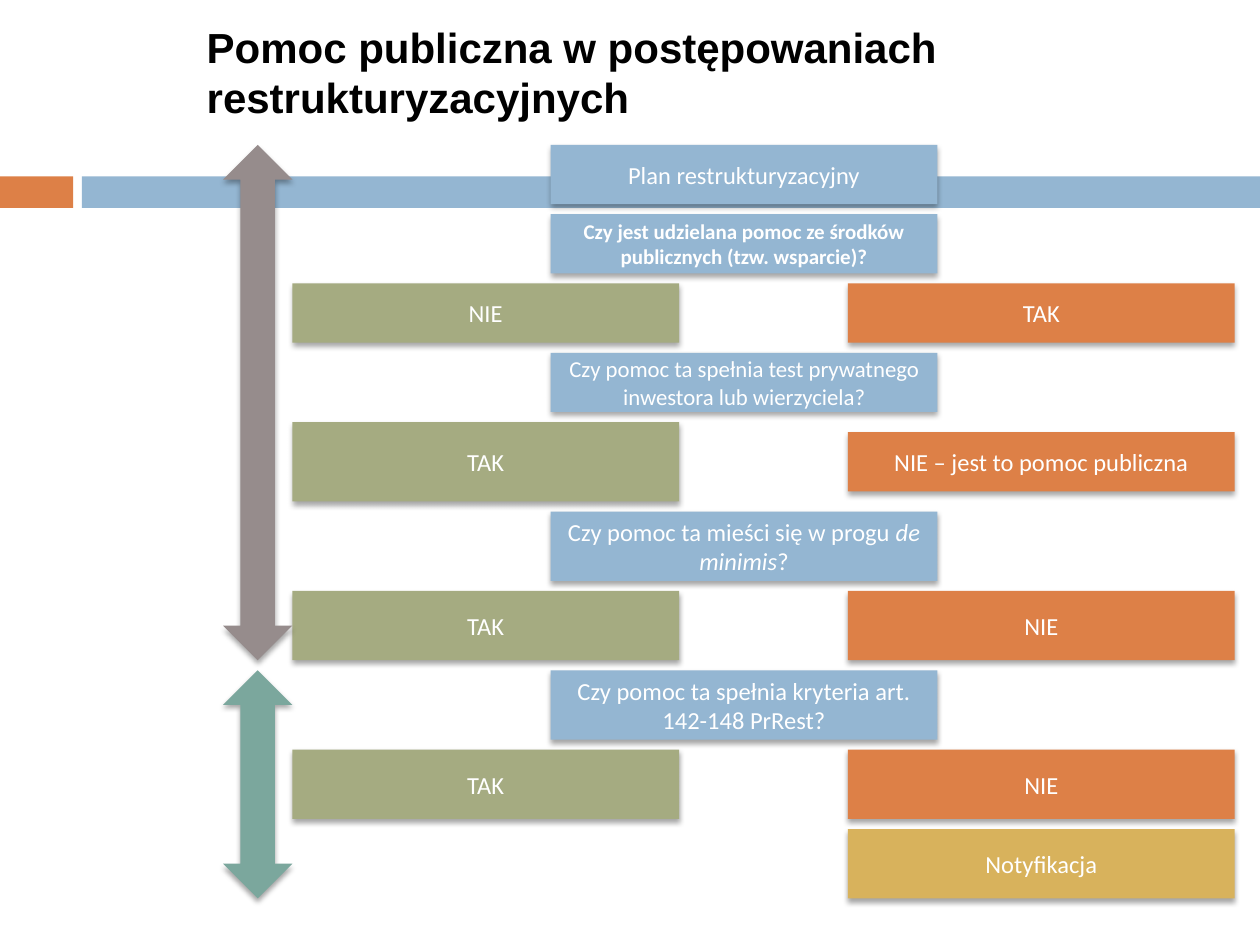
from lxml import etree
from pptx import Presentation, util as u
from pptx.dml.color import RGBColor
from pptx.enum import shapes, text
from pptx.oxml import ns

BLUE = RGBColor(0x94, 0xB6, 0xD2)
ORANGE = RGBColor(0xDD, 0x80, 0x47)
GREEN = RGBColor(0xA5, 0xAB, 0x81)
GOLD = RGBColor(0xD8, 0xB2, 0x5C)
GREY = RGBColor(0x96, 0x8C, 0x8C)
TEAL = RGBColor(0x7B, 0xA7, 0x9D)
WHITE = RGBColor(0xFF, 0xFF, 0xFF)
BLACK = RGBColor(0, 0, 0)

LEFT, CENTRE, RIGHT = 2.32, 4.37, 6.73
BOX_WIDTH = 3.07
TOP, GAP = 1.15, 0.08
ARROW_X, ARROW_WIDTH = 1.77, 0.55


class Deck:
    def __init__(self):
        self.prs = Presentation()
        self.prs.slide_width = u.Inches(10)
        self.prs.slide_height = u.Inches(7.5)
        self.s = self.prs.slides.add_slide(self.prs.slide_layouts[5])

    def title(self, words, x, y, w, h):
        sp = self.s.shapes.title
        sp.left, sp.top, sp.width, sp.height = map(u.Inches, (x, y, w, h))
        tf = sp.text_frame
        tf.text = words
        tf.word_wrap = True
        tf.auto_size = text.MSO_AUTO_SIZE.NONE
        tf.vertical_anchor = text.MSO_ANCHOR.MIDDLE
        p = tf.paragraphs[0]
        p.alignment = text.PP_ALIGN.LEFT
        self.font(p, "Arial", 24, BLACK, True)

    def font(self, p, name, size, color, bold=False):
        p.font.name = name
        p.font.size = u.Pt(size)
        p.font.color.rgb = color
        p.font.bold = bold

    def shape(self, kind, x, y, w, h, color):
        sp = self.s.shapes.add_shape(kind, *map(u.Inches, (x, y, w, h)))
        sp.shadow.inherit = False
        sp.fill.solid()
        sp.fill.fore_color.rgb = color
        sp.line.fill.background()
        return sp

    def bar(self, x, y, w, h, color):
        return self.shape(shapes.MSO_SHAPE.RECTANGLE, x, y, w, h, color)

    def cast_shadow(self, sp):
        effects = sp._element.spPr.find(ns.qn("a:effectLst"))
        shadow = etree.SubElement(
            effects, ns.qn("a:outerShdw"), blurRad=str(u.Pt(3)),
            dist=str(u.Pt(2)), dir="5400000", rotWithShape="0")
        color = etree.SubElement(shadow, ns.qn("a:srgbClr"), val="000000")
        etree.SubElement(color, ns.qn("a:alpha"), val="35000")

    def box(self, x, y, h, color, runs, size=14, bold=False):
        sp = self.bar(x, y, BOX_WIDTH, h, color)
        self.cast_shadow(sp)
        tf = sp.text_frame
        tf.word_wrap = True
        tf.vertical_anchor = text.MSO_ANCHOR.MIDDLE
        p = tf.paragraphs[0]
        p.alignment = text.PP_ALIGN.CENTER
        self.font(p, "Calibri", size, WHITE, bold)
        for words, italic in runs:
            r = p.add_run()
            r.text = words
            if italic:
                r.font.italic = True

    def arrow(self, y, h, color):
        sp = self.shape(shapes.MSO_SHAPE.UP_DOWN_ARROW,
                        ARROW_X, y, ARROW_WIDTH, h, color)
        self.cast_shadow(sp)


def question(words, size=14, bold=False):
    return CENTRE, BLUE, [(words, False)], size, bold


def answer(x, color, words):
    return x, color, [(words, False)], 14, False


def main():
    deck = Deck()
    deck.title("Pomoc publiczna w postępowaniach restrukturyzacyjnych",
               1.54, 0, 8.46, 1.14)
    deck.bar(0, 1.4, 0.58, 0.25, ORANGE)
    deck.bar(0.65, 1.4, 9.35, 0.25, BLUE)

    yes_no = [answer(LEFT, GREEN, "TAK"), answer(RIGHT, ORANGE, "NIE")]
    de_minimis = [("Czy pomoc ta mieści się w progu ", False),
                  ("de minimis", True), ("?", False)]
    rows = [
        (0.47, [question("Plan restrukturyzacyjny")]),
        (0.47, [question("Czy jest udzielana pomoc ze środków publicznych "
                         "(tzw. wsparcie)?", 12, True)]),
        (0.47, [answer(RIGHT, ORANGE, "TAK"), answer(LEFT, GREEN, "NIE")]),
        (0.47, [question("Czy pomoc ta spełnia test prywatnego inwestora "
                         "lub wierzyciela?", 13)]),
        (0.63, [answer(LEFT, GREEN, "TAK"),
                answer(RIGHT, ORANGE, "NIE – jest to pomoc publiczna")]),
        (0.55, [(CENTRE, BLUE, de_minimis, 14, False)]),
        (0.55, yes_no),
        (0.55, [question("Czy pomoc ta spełnia kryteria art. "
                         "142-148 PrRest?")]),
        (0.55, yes_no),
        (0.55, [answer(RIGHT, GOLD, "Notyfikacja")]),
    ]
    y = TOP
    for row_height, boxes in rows:
        for x, color, runs, size, bold in boxes:
            h = 0.47 if x == RIGHT and row_height == 0.63 else row_height
            deck.box(x, y + (row_height - h) / 2, h, color, runs, size, bold)
        y += row_height + GAP

    deck.arrow(TOP, 4.09, GREY)
    deck.arrow(5.32, 1.81, TEAL)
    deck.prs.save("out.pptx")


if __name__ == "__main__":
    main()
